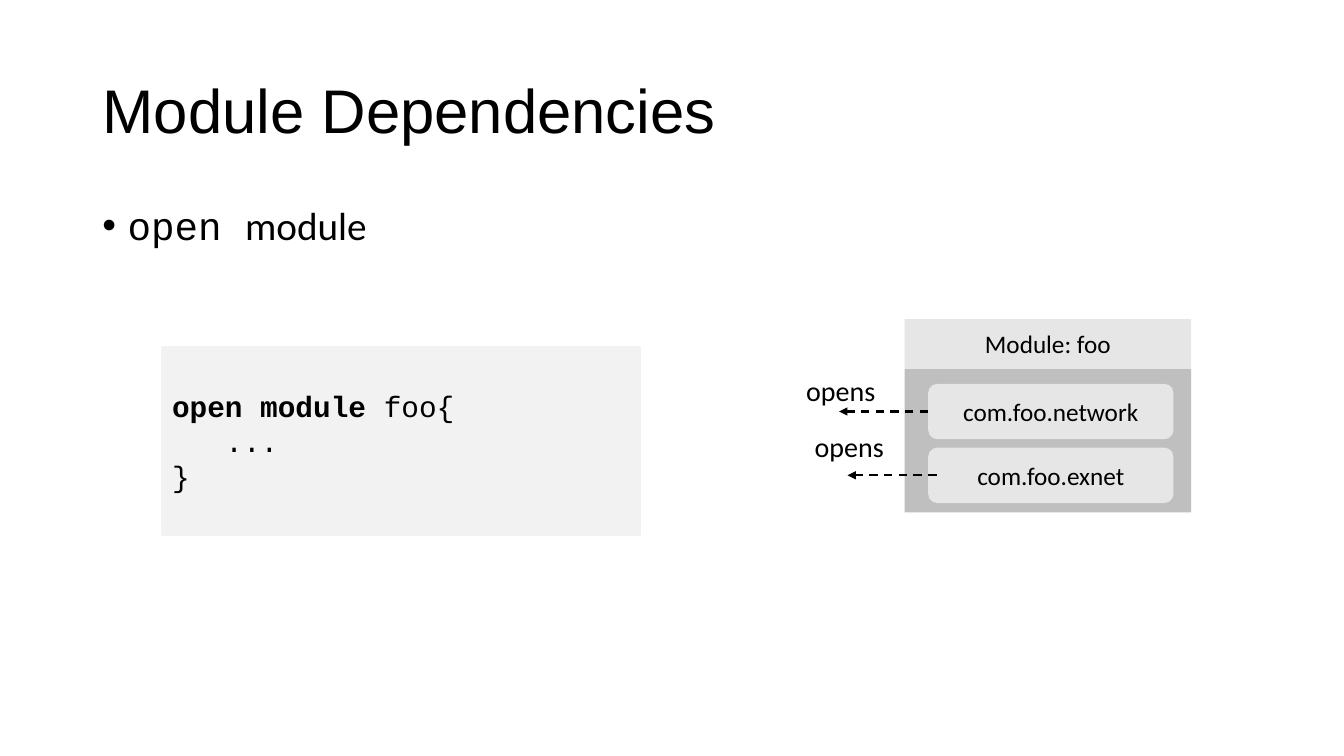
from collections import namedtuple

from lxml.etree import SubElement
from pptx import Presentation
from pptx.dml.color import RGBColor
from pptx.enum.dml import MSO_LINE_DASH_STYLE as Dash
from pptx.enum.shapes import MSO_CONNECTOR as Connector, MSO_SHAPE as Shape
from pptx.enum.text import MSO_ANCHOR as Anchor, MSO_AUTO_SIZE as AutoSize, PP_ALIGN as Align
from pptx.oxml.ns import qn
from pptx.util import Inches, Pt

COLORS = {"text": "000000", "code": "F2F2F2", "module": "BFBFBF", "label": "E7E6E6"}
CELL = Inches(13.33) / 160
Box = namedtuple("Box", "left top width height")
PACKAGES = [("com.foo.network", 0, 1.8), ("com.foo.exnet", 1, 2.7)]


def cells(*lengths):
    return [round(length * CELL) for length in lengths]


def color(name):
    return RGBColor.from_string(COLORS[name])


def add_run(paragraph, text, size, font="Calibri", bold=False):
    run = paragraph.add_run()
    run.text = text
    run.font.size = Pt(size)
    run.font.name = font
    run.font.bold = bold
    run.font.color.rgb = color("text")


def add_panel(shapes, kind, box, fill, text=None):
    shape = shapes.add_shape(kind, *cells(*box))
    shape.shadow.inherit = False
    shape.fill.solid()
    shape.fill.fore_color.rgb = color(fill)
    shape.line.fill.background()
    shape.text_frame.vertical_anchor = Anchor.MIDDLE
    if text:
        paragraph = shape.text_frame.paragraphs[0]
        paragraph.alignment = Align.CENTER
        add_run(paragraph, text, 18)
    return shape


def place(shape, box):
    shape.left, shape.top, shape.width, shape.height = cells(*box)


def fill_title(title, box):
    place(title, box)
    title.text_frame.vertical_anchor = Anchor.MIDDLE
    paragraph = title.text_frame.paragraphs[0]
    paragraph.alignment = Align.LEFT
    paragraph.line_spacing = 0.9
    add_run(paragraph, "Module Dependencies", 44, "Arial")


def fill_body(body, box):
    place(body, box)
    paragraph = body.text_frame.paragraphs[0]
    paragraph.line_spacing = 0.9
    paragraph.space_before = Pt(10)
    properties = paragraph._p.get_or_add_pPr()
    properties.set("marL", str(Inches(0.25)))
    properties.set("indent", str(-Inches(0.25)))
    SubElement(properties, qn("a:buFont")).set("typeface", "Arial")
    SubElement(properties, qn("a:buChar")).set("char", "•")
    add_run(paragraph, "open ", 28, "Courier New")
    add_run(paragraph, "module", 28)


def add_code(shapes, box):
    panel = add_panel(shapes, Shape.RECTANGLE, box, "code")
    panel.line.color.rgb = color("code")
    panel.line.width = Pt(1)
    frame = panel.text_frame
    frame.word_wrap = True
    lines = [[("open module ", True), ("foo{", False)], [("...", False)], [("}", False)]]
    for index, line in enumerate(lines):
        paragraph = frame.add_paragraph() if index else frame.paragraphs[0]
        paragraph.alignment = Align.LEFT
        for text, bold in line:
            add_run(paragraph, text, 21, "Courier New", bold)
    frame.paragraphs[1]._p.get_or_add_pPr().set("marL", str(Inches(0.53)))


def add_opens_label(shapes, box):
    label = shapes.add_textbox(*cells(*box))
    label.text_frame.word_wrap = False
    label.text_frame.auto_size = AutoSize.SHAPE_TO_FIT_TEXT
    add_run(label.text_frame.paragraphs[0], "opens", 20)


def add_opens_arrow(shapes, start, middle, length):
    arrow = shapes.add_connector(
        Connector.STRAIGHT, *cells(start, middle, start - length, middle))
    arrow.line.color.rgb = color("text")
    arrow.line.width = Pt(1.5)
    arrow.line.dash_style = Dash.DASH
    SubElement(arrow.line._get_or_add_ln(), qn("a:tailEnd")).set("type", "triangle")
    SubElement(arrow._element.spPr, qn("a:effectLst"))
    return arrow


def add_module(shapes, box):
    header = 5.9
    add_panel(shapes, Shape.RECTANGLE,
              Box(box.left, box.top + header, box.width, box.height - header), "module")
    add_panel(shapes, Shape.RECTANGLE,
              Box(box.left, box.top, box.width, header), "label", "Module: foo")
    for index, (name, shift, rise) in enumerate(PACKAGES):
        row = Box(box.left + 2.8, box.top + 7.7 + index * 7.6, 29.2, 6.6)
        package = add_panel(shapes, Shape.ROUNDED_RECTANGLE, row, "label", name)
        start = row.left + shift
        add_opens_label(shapes, Box(start - 15.7, row.top - rise, 10.7, 5.3))
        arrow = add_opens_arrow(shapes, start, row.top + row.height / 2, 10.6)
        if not shift:
            arrow.begin_connect(package, 1)


def main():
    presentation = Presentation()
    presentation.slide_width, presentation.slide_height = Inches(13.33), Inches(7.5)
    slide = presentation.slides.add_slide(presentation.slide_layouts[1])
    fill_title(slide.shapes.title, Box(11, 4.8, 138, 17.4))
    fill_body(slide.placeholders[1], Box(11, 24, 138, 57.1))
    add_code(slide.shapes, Box(19.3, 41.3, 56.9, 22.4))
    add_module(slide.shapes, Box(107.7, 38, 34.1, 23))
    presentation.save("out.pptx")


if __name__ == "__main__":
    main()
